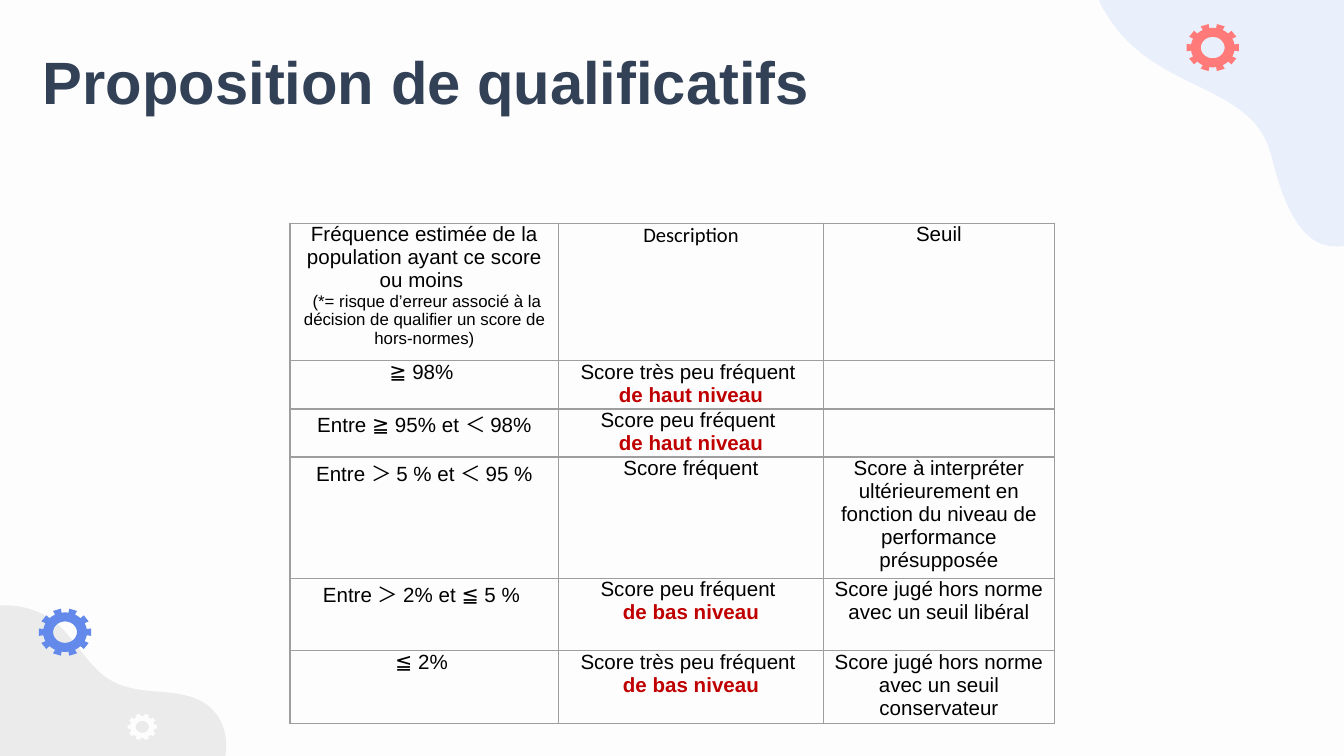
from dataclasses import dataclass
from math import cos, pi, sin

from lxml import etree
from pptx import Presentation
from pptx.dml.color import RGBColor
from pptx.enum.text import MSO_ANCHOR, MSO_AUTO_SIZE, PP_ALIGN
from pptx.oxml.ns import qn
from pptx.shapes.autoshape import Shape
from pptx.slide import Slide
from pptx.table import _Cell
from pptx.util import Cm, Pt

TOP, LEFT, CENTER = MSO_ANCHOR.TOP, PP_ALIGN.LEFT, PP_ALIGN.CENTER
NO_AUTOFIT = MSO_AUTO_SIZE.NONE
COLORS = {
    "background": "FDFDFD", "title": "334157", "text": "000000", "emphasis": "C00000",
    "border": "9E9E9E", "pale_blue": "CBDDFA", "gray": "EBEBEB",
    "coral": "FF7A78", "blue": "6389EB",
}
UNITS_PER_CM = 1000
TEETH = 10

Point = tuple[float, float]


@dataclass(frozen=True)
class Blob:
    """Closed outline: a start point, then two controls and an end per curve."""
    color: str
    start: Point
    curves: list[tuple[Point, Point, Point]]
    opacity: int = 100


@dataclass(frozen=True)
class Gear:
    color: str
    center: Point
    radii: Point


@dataclass(frozen=True)
class Line:
    text: str
    size: float = 11
    color: str = "text"
    bold: bool = False
    font: str = "Arial"


BLOBS = [
    Blob("pale_blue", (24.59, -5.11), [
        ((26.01, -5.49), (27.1, -2.95), (27.99, -1.47)),
        ((28.5, -0.61), (28.47, -0.74), (29.46, 0.61)),
        ((30.25, 1.68), (30, 2.39), (29.49, 2.64)),
        ((29.36, 2.69), (29.18, 2.74), (29.06, 2.74)),
        ((28.32, 2.72), (28.04, 2.62), (26.49, 4.01)),
        ((24.94, 5.41), (24.36, 4.32), (24.03, 2.95)),
        ((23.7, 1.57), (21.92, 1.78), (20.98, 0.38)),
        ((20.04, -0.99), (21.08, -1.68), (22.38, -2.16)),
        ((23.67, -2.62), (22.86, -4.29), (24.59, -5.11)),
    ], opacity=39),
    Blob("gray", (-1.3, 15.77), [
        ((-1.83, 15.14), (-2.06, 14.3), (-1.93, 13.49)),
        ((-1.83, 12.78), (-1.5, 12.12), (-0.91, 11.73)),
        ((-0.33, 11.35), (0.51, 11.33), (1.04, 11.76)),
        ((1.45, 12.09), (1.68, 12.65), (2.13, 12.88)),
        ((2.41, 13.03), (2.77, 13.06), (3.07, 13.08)),
        ((3.4, 13.11), (3.76, 13.16), (3.99, 13.39)),
        ((4.32, 13.69), (4.34, 14.2), (4.17, 14.61)),
        ((3.99, 15.01), (3.66, 15.29), (3.3, 15.54)),
        ((2.29, 16.26), (0.89, 16.99), (-0.33, 16.48)),
        ((-0.71, 16.31), (-1.04, 16.08), (-1.3, 15.77)),
    ]),
]
GEARS = [
    Gear("coral", (22.92, 0.9), (0.5, 0.45)),
    Gear("blue", (1.23, 11.95), (0.5, 0.45)),
    Gear("background", (2.69, 13.74), (0.28, 0.25)),
]

HIGH = Line("de haut niveau", color="emphasis", bold=True)
LOW = Line("de bas niveau", color="emphasis", bold=True)
RARE = Line("Score peu fréquent ")
VERY_RARE = Line("Score très peu fréquent ")
ABNORMAL = Line("Score jugé hors norme")
COLUMN_WIDTHS = [5.08, 5, 4.37]
ROW_HEIGHTS = [2.6, 0.91, 0.91, 2.29, 1.37, 1.37]
ROWS: list[list[list[Line]]] = [
    [[Line("Fréquence estimée de la population ayant ce score ou moins "),
      Line(" (*= risque d’erreur associé à la décision de qualifier un score de hors-normes)",
           size=9)],
     [Line("Description", font="Calibri")], [Line("Seuil")]],
    [[Line("≧ 98% ")], [VERY_RARE, HIGH], []],
    [[Line("Entre ≧ 95% et ＜ 98%")], [RARE, HIGH], []],
    [[Line("Entre ＞ 5 % et ＜ 95 %")], [Line("Score fréquent")],
     [Line("Score à interpréter ultérieurement en fonction du niveau de performance "
           "présupposée")]],
    [[Line("Entre ＞ 2% et ≦ 5 % ")], [RARE, LOW],
     [ABNORMAL, Line("avec un seuil libéral")]],
    [[Line("≦ 2% ")], [VERY_RARE, LOW],
     [ABNORMAL, Line("avec un seuil conservateur")]],
]


def rgb(name: str) -> RGBColor:
    return RGBColor.from_string(COLORS[name])


def draw_outline(slide: Slide, contours: list[list[Point]], color: str) -> Shape:
    """Draw one filled freeform from closed contours given in centimetres."""
    scaled = [[(x * UNITS_PER_CM, y * UNITS_PER_CM) for x, y in points] for points in contours]
    builder = slide.shapes.build_freeform(*scaled[0][0], scale=Cm(1) / UNITS_PER_CM)
    builder.add_line_segments(scaled[0][1:], close=True)
    for points in scaled[1:]:
        builder.move_to(*points[0])
        builder.add_line_segments(points[1:], close=True)
    shape = builder.convert_to_shape()
    shape.shadow.inherit = False
    shape.fill.solid()
    shape.fill.fore_color.rgb = rgb(color)
    shape.line.fill.background()
    return shape


def curve_points(start: Point, curve: tuple[Point, Point, Point], steps: int = 16) -> list[Point]:
    """Sample a cubic Bézier curve, leaving out its start."""
    points = []
    for step in range(1, steps + 1):
        t = step / steps
        weights = ((1 - t) ** 3, 3 * t * (1 - t) ** 2, 3 * t * t * (1 - t), t ** 3)
        x, y = (sum(w * p[axis] for w, p in zip(weights, (start, *curve))) for axis in (0, 1))
        points.append((x, y))
    return points


def draw_blob(slide: Slide, blob: Blob) -> None:
    points = [blob.start]
    for curve in blob.curves:
        points += curve_points(points[-1], curve)
    shape = draw_outline(slide, [points], blob.color)
    if blob.opacity < 100:
        color = shape.fill._xPr.find(f".//{qn('a:srgbClr')}")
        etree.SubElement(color, qn("a:alpha"), val=str(blob.opacity * 1000))


def draw_gear(slide: Slide, gear: Gear) -> None:
    def at(angle: float, radius: float) -> Point:
        return (gear.center[0] + gear.radii[0] * radius * cos(angle),
                gear.center[1] + gear.radii[1] * radius * sin(angle))

    pitch = 2 * pi / TEETH
    tooth = [(-0.25, 0.83), (-0.25, 1), (0.25, 1), (0.25, 0.83), (0.5, 0.83)]
    rim = [at((index + offset) * pitch, radius)
           for index in range(TEETH) for offset, radius in tooth]
    hole = [at(-2 * pi * index / 36, 0.45) for index in range(36)]
    draw_outline(slide, [rim, hole], gear.color)


def format_title(slide: Slide) -> None:
    title = slide.shapes.title
    title.left, title.top, title.width, title.height = Cm(0.56), Cm(0.46), Cm(21.44), Cm(1.6)
    frame = title.text_frame
    frame.auto_size, frame.vertical_anchor, frame.word_wrap = NO_AUTOFIT, TOP, True
    frame.margin_left = frame.margin_right = Cm(0.25)
    frame.margin_top, frame.margin_bottom = Cm(0.38), 0
    write_lines(frame, [Line("Proposition de qualificatifs", 32, "title", True)], LEFT)


def write_lines(frame, lines: list[Line], alignment: PP_ALIGN) -> None:
    for index, line in enumerate(lines):
        paragraph = frame.add_paragraph() if index else frame.paragraphs[0]
        paragraph.text, paragraph.alignment = line.text, alignment
        font = paragraph.font
        font.name, font.size, font.bold = line.font, Pt(line.size), line.bold
        font.color.rgb = rgb(line.color)


def format_cell(cell: _Cell, lines: list[Line]) -> None:
    cell.margin_left = cell.margin_right = Cm(0.18)
    cell.margin_top = cell.margin_bottom = 0
    properties = cell._tc.get_or_add_tcPr()
    for side in ("lnL", "lnR", "lnT", "lnB"):
        border = etree.SubElement(properties, qn(f"a:{side}"), w=str(Pt(0.75)))
        fill = etree.SubElement(border, qn("a:solidFill"))
        etree.SubElement(fill, qn("a:srgbClr"), val=COLORS["border"])
    cell.fill.background()
    write_lines(cell.text_frame, lines or [Line("")], CENTER)


def draw_table(slide: Slide) -> None:
    table = slide.shapes.add_table(
        len(ROWS), len(COLUMN_WIDTHS), Cm(5.48), Cm(4.22),
        Cm(sum(COLUMN_WIDTHS)), Cm(sum(ROW_HEIGHTS))).table
    table.first_row = table.horz_banding = False
    for column, width in zip(table.columns, COLUMN_WIDTHS):
        column.width = Cm(width)
    for row, height, contents in zip(table.rows, ROW_HEIGHTS, ROWS):
        row.height = Cm(height)
        for cell, lines in zip(row.cells, contents):
            format_cell(cell, lines)


def main() -> None:
    presentation = Presentation()
    presentation.slide_width, presentation.slide_height = Cm(25.4), Cm(14.29)
    slide = presentation.slides.add_slide(presentation.slide_layouts[5])
    slide.background.fill.solid()
    slide.background.fill.fore_color.rgb = rgb("background")
    for blob in BLOBS:
        draw_blob(slide, blob)
    for gear in GEARS:
        draw_gear(slide, gear)
    format_title(slide)
    draw_table(slide)
    presentation.save("out.pptx")


if __name__ == "__main__":
    main()
